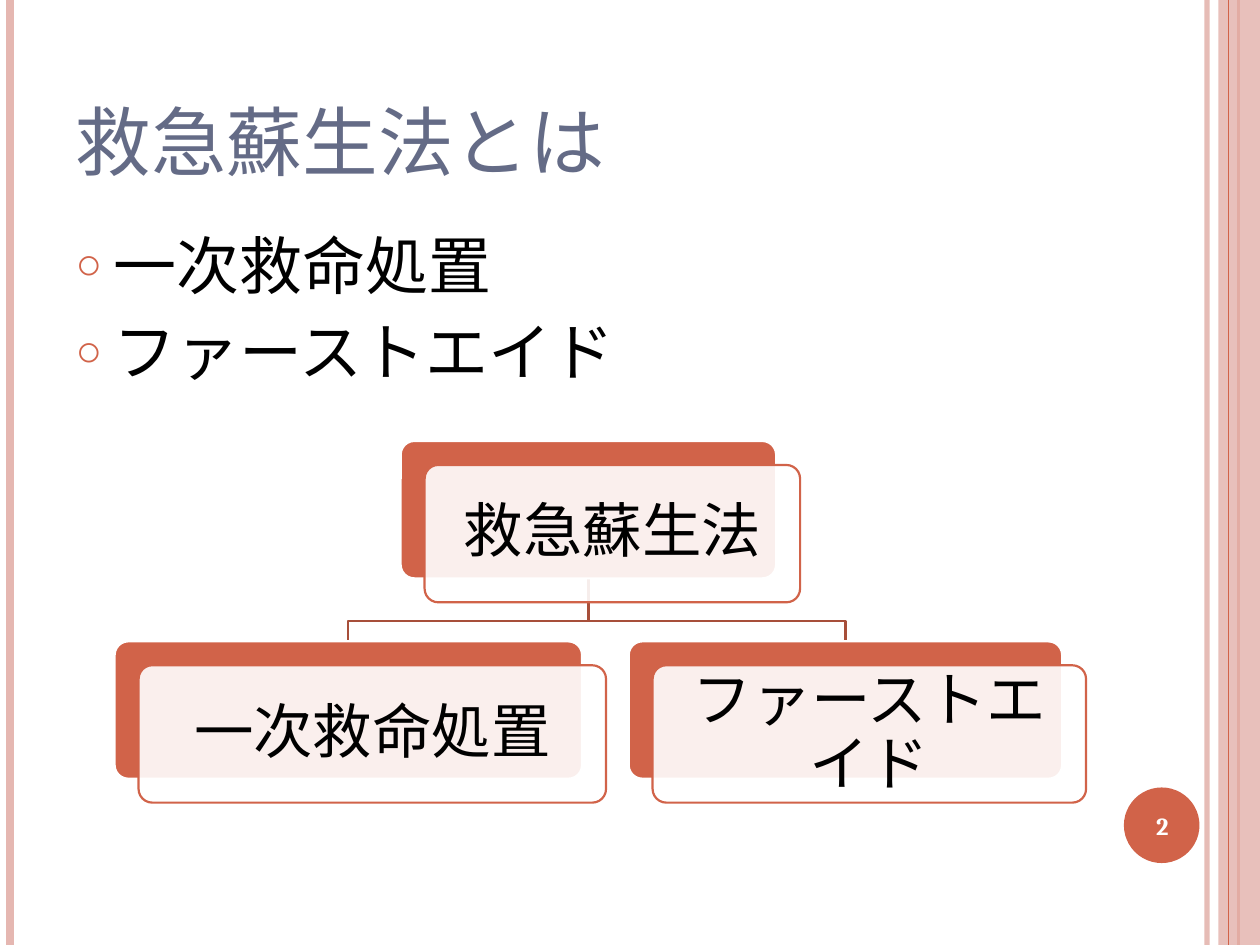
from pptx import Presentation
from pptx.util import Inches, Pt
from pptx.dml.color import RGBColor
from pptx.enum.shapes import MSO_SHAPE, MSO_CONNECTOR
from pptx.enum.text import PP_ALIGN, MSO_ANCHOR, MSO_AUTO_SIZE
from pptx.oxml.ns import qn
from lxml.etree import SubElement

RUST, PINK, WHITE, BLACK = "D16349", "E5B7B1", "FFFFFF", "000000"


def color(text):
    return RGBColor.from_string(text)


class Deck:
    font = "Cambria"

    def __init__(self, slide):
        self.slide = slide
        self.shapes = slide.shapes

    def fade(self, fill, alpha):
        tone = fill._xPr.find(".//" + qn("a:srgbClr"))
        SubElement(tone, qn("a:alpha")).set("val", str(alpha * 1000))

    def style(self, para, size, tone, bold=False):
        for run in para.runs:
            run.font.name = self.font
            run.font.size = Pt(size)
            run.font.bold = bold
            run.font.color.rgb = color(tone)

    def place(self, shape, x, y, w, h):
        shape.left, shape.top = Inches(x), Inches(y)
        shape.width, shape.height = Inches(w), Inches(h)

    def rule(self, x, width, tone, alpha=100):
        line = self.shapes.add_connector(
            MSO_CONNECTOR.STRAIGHT, Inches(x), 0, Inches(x), Inches(7.5))
        line.line.color.rgb = color(tone)
        line.line.width = Pt(width)
        if alpha < 100:
            self.fade(line.line.fill, alpha)
        SubElement(line._element.spPr, qn("a:effectLst"))

    def shape(self, kind, x, y, w, h, fill, edge=None, alpha=100):
        item = self.shapes.add_shape(kind, Inches(x), Inches(y), Inches(w), Inches(h))
        item.shadow.inherit = False
        item.fill.solid()
        item.fill.fore_color.rgb = color(fill)
        if alpha < 100:
            self.fade(item.fill, alpha)
        if edge:
            item.line.color.rgb = color(edge)
            item.line.width = Pt(1.25)
        else:
            item.line.fill.background()
        return item

    def label(self, text, x, y, w, h, size, tone, bold=False, inset=None):
        box = self.shapes.add_textbox(Inches(x), Inches(y), Inches(w), Inches(h))
        frame = box.text_frame
        frame.word_wrap = True
        frame.vertical_anchor = MSO_ANCHOR.MIDDLE
        if inset:
            frame.margin_left = frame.margin_right = Inches(inset)
            frame.margin_top = frame.margin_bottom = Inches(inset)
        frame.text = text
        para = frame.paragraphs[0]
        para.alignment = PP_ALIGN.CENTER
        self.style(para, size, tone, bold)
        return para

    def title(self, text):
        head = self.shapes.title
        self.place(head, 0.5, 0.3, 5.6, 1.25)
        frame = head.text_frame
        frame.auto_size = MSO_AUTO_SIZE.NONE
        frame.vertical_anchor = MSO_ANCHOR.BOTTOM
        frame.text = text
        para = frame.paragraphs[0]
        para.alignment = PP_ALIGN.LEFT
        self.style(para, 54, "646B86")
        para.runs[0].font._element.set("cap", "small")

    def bullets(self, items):
        body = self.slide.placeholders[1]
        self.place(body, 0.5, 1.75, 8.17, 5.33)
        frame = body.text_frame
        frame.auto_size = MSO_AUTO_SIZE.NONE
        frame.text = "\n".join(items)
        for para in frame.paragraphs:
            para.space_before = Pt(6)
            self.style(para, 36, BLACK)
            props = para._p.get_or_add_pPr()
            props.set("marL", str(Inches(0.3)))
            props.set("indent", str(-Inches(0.3)))
            tint = SubElement(props, qn("a:buClr"))
            SubElement(tint, qn("a:srgbClr")).set("val", RUST)
            SubElement(props, qn("a:buSzPct")).set("val", "70000")
            SubElement(props, qn("a:buChar")).set("char", "○")

    def branch(self, points):
        (x, y), *rest = [(Inches(a), Inches(b)) for a, b in points]
        build = self.shapes.build_freeform(x, y)
        build.add_line_segments(rest, close=False)
        path = build.convert_to_shape()
        path.shadow.inherit = False
        path.fill.background()
        path.line.color.rgb = color("A74F3A")
        path.line.width = Pt(1.25)

    def card(self, text, x, y, w, h=1.09):
        shift, pad = 0.19, 0.03
        back = self.shape(MSO_SHAPE.ROUNDED_RECTANGLE, x, y, w, h, RUST, WHITE)
        x, y = x + shift, y + shift
        front = self.shape(MSO_SHAPE.ROUNDED_RECTANGLE, x, y, w, h, WHITE, RUST, 90)
        for item in (back, front):
            item.adjustments[0] = 0.1
        para = self.label(text, x + pad, y + pad, w - 2 * pad, h - 2 * pad,
                          34, BLACK, inset=0.14)
        para.line_spacing = 0.9


def main():
    show = Presentation()
    show.slide_width, show.slide_height = Inches(10), Inches(7.5)
    deck = Deck(show.slides.add_slide(show.slide_layouts[1]))

    # Side bands
    deck.rule(9.58, 3, PINK, 93)
    deck.rule(0.08, 4.5, PINK)
    deck.rule(9.83, 1.5, RUST)
    deck.shape(MSO_SHAPE.RECTANGLE, 9.67, 0, 0.33, 7.5, PINK, alpha=87)
    deck.rule(9.75, 0.75, RUST)

    # Title and list
    parts = ["一次救命処置", "ファーストエイド"]
    deck.title("救急蘇生法とは")
    deck.bullets(parts)

    # Tree: branches first, cards over them
    root, low = 4.67, 5.09
    spots = [(0.91, 3.71), (4.99, 3.44)]
    for x, w in spots:
        mid = x + w / 2
        deck.branch([(root, 4.59), (root, 4.93), (mid, 4.93), (mid, low)])
    deck.card("救急蘇生法", 3.18, 3.5, 2.98)
    for text, (x, w) in zip(parts, spots):
        deck.card(text, x, low, w)

    # Page number
    deck.shape(MSO_SHAPE.OVAL, 8.92, 6.25, 0.6, 0.6, RUST)
    deck.label("2", 8.89, 6.27, 0.67, 0.57, 14, WHITE, bold=True)

    show.save("out.pptx")


if __name__ == "__main__":
    main()
